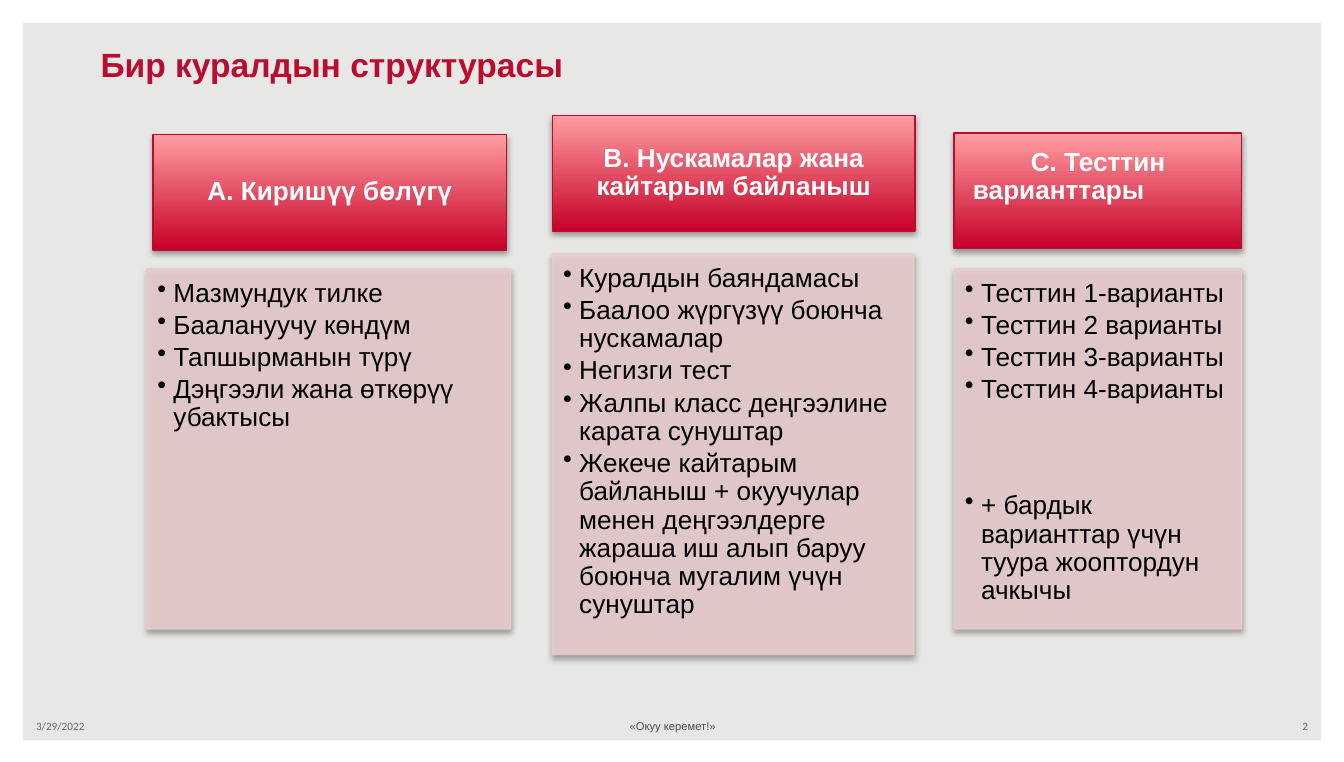
from lxml import etree
from pptx import Presentation
from pptx.dml.color import RGBColor
from pptx.enum.shapes import MSO_SHAPE
from pptx.enum.text import MSO_ANCHOR, PP_ALIGN
from pptx.oxml.ns import qn
from pptx.util import Inches, Pt

FRAME, RECTANGLE = MSO_SHAPE.FRAME, MSO_SHAPE.RECTANGLE
TOP, MIDDLE = MSO_ANCHOR.TOP, MSO_ANCHOR.MIDDLE
LEFT, CENTER, RIGHT = PP_ALIGN.LEFT, PP_ALIGN.CENTER, PP_ALIGN.RIGHT

COLORS = {
    "background": "E7E7E5", "white": "FFFFFF", "black": "000000",
    "crimson": "BA0C2F", "head_dark": "C60028", "head_light": "FF9EA2",
    "panel": "E7CCCD", "footer": "6C6463", "footer_center": "514B4A",
}
PANEL_ALPHA = 90
BULLET_INDENT = 0.12

# Each column: head box, panel box, head text, head format, panel items.
COLUMNS = [
    ((1.14, 1, 2.63, 0.86), (1.09, 2, 2.71, 2.68), "А. Киришүү бөлүгү", {},
     ["Мазмундук тилке", "Баалануучу көндүм", "Тапшырманын түрү",
      "Дэңгээли жана өткөрүү убактысы"]),
    ((4.11, 0.86, 2.7, 0.86), (4.11, 1.89, 2.69, 2.98),
     "В. Нускамалар жана кайтарым байланыш", {},
     ["Куралдын баяндамасы", "Баалоо жүргүзүү боюнча нускамалар",
      "Негизги тест", "Жалпы класс деңгээлине карата сунуштар",
      "Жекече кайтарым байланыш + окуучулар менен деңгээлдерге жараша "
      "иш алып баруу боюнча мугалим үчүн сунуштар"]),
    ((7.1, 0.99, 2.14, 0.86), (7.1, 2, 2.14, 2.68),
     "С. Тесттин варианттары",
     {"align": LEFT, "margin": 0.03, "indent": 0.43,
      "insets": (0.11, 0.06, 0.11, 0.27)},
     ["Тесттин 1-варианты", "Тесттин 2 варианты", "Тесттин 3-варианты",
      "Тесттин 4-варианты",
      ("+ бардык варианттар үчүн туура жооптордун ачкычы", 45)]),
]


def rgb(name):
    return RGBColor.from_string(COLORS[name])


def write(frame, items, size=14, color="black", font="Arial", bold=False,
          align=LEFT, anchor=TOP, insets=(0.1, 0.05, 0.1, 0.05), line=None,
          after=0, margin=0, indent=0, bullet=None):
    """Write one paragraph per item; an item may be (text, space before)."""
    frame.word_wrap = True
    frame.vertical_anchor = anchor
    (frame.margin_left, frame.margin_top,
     frame.margin_right, frame.margin_bottom) = map(Inches, insets)
    for index, item in enumerate(items):
        text, before = item if isinstance(item, tuple) else (item, 0)
        para = frame.add_paragraph() if index else frame.paragraphs[0]
        properties = para._p.get_or_add_pPr()
        properties.set("marL", str(Inches(margin)))
        properties.set("indent", str(Inches(indent)))
        if bullet:
            etree.SubElement(properties, qn("a:buChar"), char=bullet)
        para.alignment = align
        para.line_spacing = line
        para.space_before, para.space_after = Pt(before), Pt(after)
        span = para.add_run()
        span.text = text
        span.font.name, span.font.size, span.font.bold = font, Pt(size), bold
        span.font.color.rgb = rgb(color)


def add_text(page, box, text, **style):
    area = page.shapes.add_textbox(*map(Inches, box))
    write(area.text_frame, [text], **style)


def add_card(page, box, line_color):
    card = page.shapes.add_shape(RECTANGLE, *map(Inches, box))
    card.line.color.rgb = rgb(line_color)
    card.line.width = Pt(0.75)
    return card


def add_shadow(shape):
    shape.shadow.inherit = False
    effects = shape._element.spPr.find(qn("a:effectLst"))
    shadow = etree.SubElement(
        effects, qn("a:outerShdw"), blurRad=str(Pt(3.1)), dist=str(Pt(1.8)),
        dir=str(90 * 60000), rotWithShape="0")
    color = etree.SubElement(shadow, qn("a:srgbClr"), val=COLORS["black"])
    etree.SubElement(color, qn("a:alpha"), val=str(35 * 1000))


def add_head(page, box, text, style):
    head = add_card(page, box, "crimson")
    head.fill.gradient()
    head.fill.gradient_angle = 90
    for stop, name, position in zip(head.fill.gradient_stops,
                                    ("head_dark", "head_light"), (0, 1)):
        stop.color.rgb = rgb(name)
        stop.position = position
    add_shadow(head)
    base = {"color": "white", "bold": True, "align": CENTER, "anchor": MIDDLE,
            "insets": (0.11, 0.06, 0.11, 0.06), "line": 0.9}
    write(head.text_frame, [text], **{**base, **style})


def add_panel(page, box, items):
    panel = add_card(page, box, "panel")
    panel.fill.solid()
    panel.fill.fore_color.rgb = rgb("panel")
    for color in panel._element.spPr.iter(qn("a:srgbClr")):
        etree.SubElement(color, qn("a:alpha"), val=str(PANEL_ALPHA * 1000))
    add_shadow(panel)
    write(panel.text_frame, items, insets=(0.08, 0.08, 0.11, 0.12), line=0.9,
          after=2.1, margin=BULLET_INDENT, indent=-BULLET_INDENT, bullet="•")


def add_border(page, box):
    border = page.shapes.add_shape(FRAME, *map(Inches, box))
    border.adjustments[0] = 0.03
    border.shadow.inherit = False
    border.fill.solid()
    border.fill.fore_color.rgb = rgb("white")
    border.line.fill.background()


def add_footer(page, top, height):
    for left, width, text, align, font, color in (
            (0.17, 2.33, "3/29/2022", LEFT, "Calibri", "footer"),
            (3.42, 3.17, "«Окуу керемет!»", CENTER, "Arial", "footer_center"),
            (7.5, 2.33, "2", RIGHT, "Calibri", "footer")):
        add_text(page, (left, top, width, height), text, size=6, font=font,
                 color=color, align=align, anchor=MIDDLE)


def main():
    deck = Presentation()
    deck.slide_width, deck.slide_height = Inches(10), Inches(5.67)
    page = deck.slides.add_slide(deck.slide_layouts[6])
    page.background.fill.solid()
    page.background.fill.fore_color.rgb = rgb("background")
    add_border(page, (0, 0, 10, 5.68))
    add_footer(page, 5.3, 0.2)
    add_text(page, (0.65, 0.28, 8.51, 0.4), "Бир куралдын структурасы",
             size=18, color="crimson", bold=True)
    for head_box, panel_box, title, style, items in COLUMNS:
        add_head(page, head_box, title, style)
        add_panel(page, panel_box, items)
    deck.save("out.pptx")


if __name__ == "__main__":
    main()
